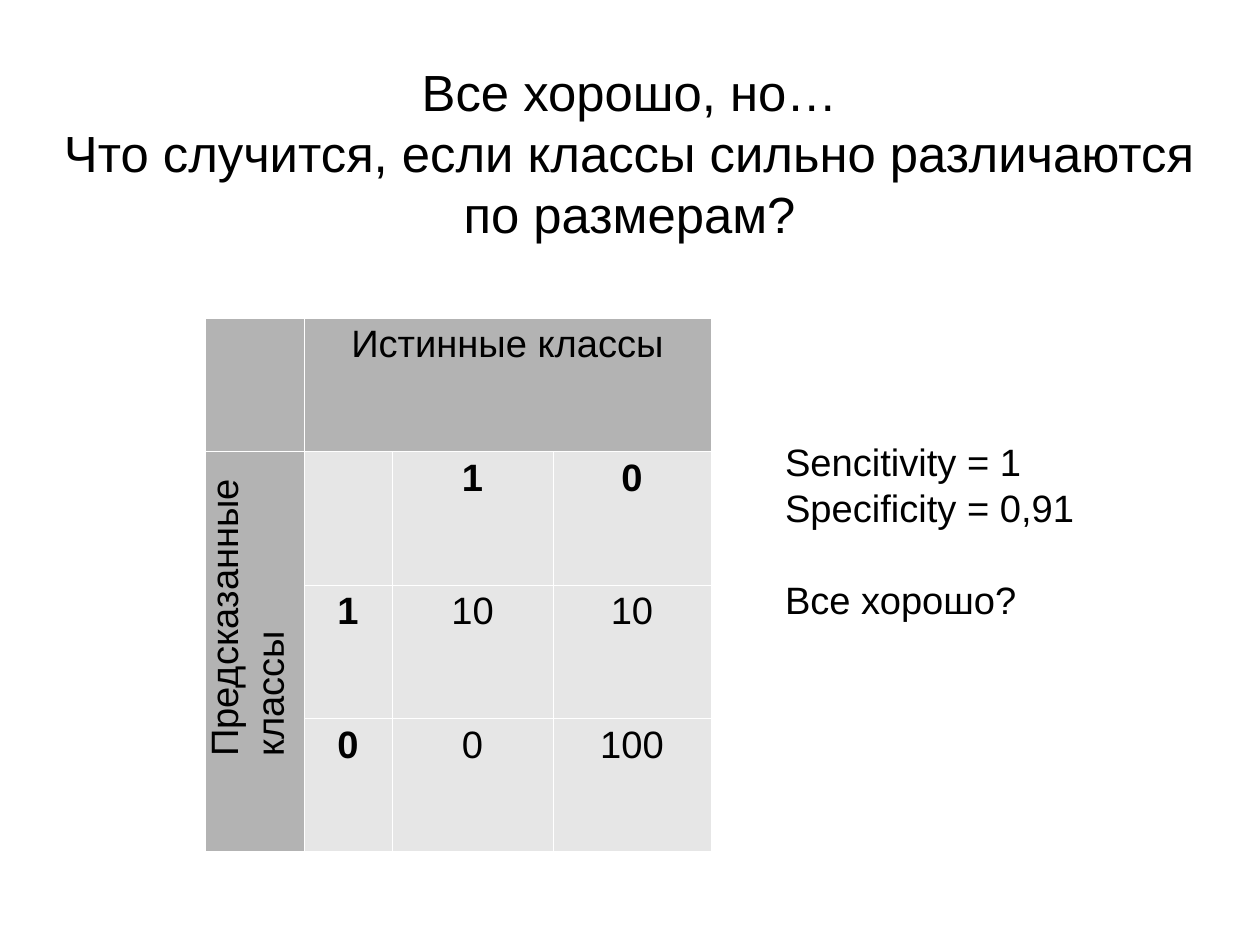
from dataclasses import dataclass

from lxml.etree import SubElement
from pptx import Presentation
from pptx.dml.color import RGBColor as RGB
from pptx.enum.text import MSO_ANCHOR as Anchor, MSO_AUTO_SIZE as AutoSize, PP_ALIGN as Align
from pptx.oxml.ns import qn
from pptx.util import Inches, Pt

TITLE_LINES = ["Все хорошо, но…", "Что случится, если классы сильно различаются по размерам?"]
TRUE_LABEL = "Истинные классы"
PREDICTED_LABEL = "Предсказанные классы"
CONFUSION = [["", "1", "0"], ["1", "10", "10"], ["0", "0", "100"]]
METRICS = ["Sencitivity = 1", "Specificity = 0,91"]
QUESTION = "Все хорошо?"

CM_PER_INCH = 2.54
SLIDE_CM = (28, 21)
COLUMN_WIDTHS = [0.87, 0.77, 1.41, 1.38]
TABLE_HEIGHT = 4.67


@dataclass(frozen=True)
class Theme:
    font: str = "Arial"
    title_size: float = 32
    body_size: float = 24
    question_gap: float = 28.8
    border_width: float = 0.06
    ink: RGB = RGB(0, 0, 0)
    header: RGB = RGB(0xB3, 0xB3, 0xB3)
    body: RGB = RGB(0xE6, 0xE6, 0xE6)
    border: str = "FFFFFF"


THEME = Theme()


def add_run(paragraph, text, size=THEME.body_size, bold=False):
    run = paragraph.add_run()
    run.text = text
    run.font.name = THEME.font
    run.font.size = Pt(size)
    run.font.bold = bold
    run.font.color.rgb = THEME.ink


def fill_title(title):
    title.left, title.top, title.width, title.height = map(Inches, (0.55, 0.34, 9.92, 1.99))
    frame = title.text_frame
    frame.margin_left = frame.margin_top = frame.margin_right = frame.margin_bottom = 0
    frame.vertical_anchor = Anchor.MIDDLE
    frame.word_wrap = True
    frame.auto_size = AutoSize.NONE
    heading = frame.paragraphs[0]
    heading.alignment = Align.CENTER
    for index, line in enumerate(TITLE_LINES):
        if index:
            heading.add_line_break()
        add_run(heading, line, THEME.title_size)


def style_cell(cell, color):
    """Draw the four borders, then the fill, in the order the schema asks for."""
    properties = cell._tc.get_or_add_tcPr()
    for side in ("a:lnL", "a:lnR", "a:lnT", "a:lnB"):
        border = SubElement(properties, qn(side), w=str(int(Pt(THEME.border_width))))
        SubElement(SubElement(border, qn("a:solidFill")), qn("a:srgbClr"), val=THEME.border)
    cell.fill.solid()
    cell.fill.fore_color.rgb = color


def write_cell(cell, text, bold=False):
    paragraph = cell.text_frame.paragraphs[0]
    paragraph.alignment = Align.CENTER
    add_run(paragraph, text, bold=bold)


def add_confusion_table(slide):
    row_count, column_count = len(CONFUSION) + 1, len(COLUMN_WIDTHS)
    table = slide.shapes.add_table(
        row_count, column_count, Inches(1.79), Inches(2.78),
        Inches(sum(COLUMN_WIDTHS)), Inches(TABLE_HEIGHT)).table
    table.first_row = table.horz_banding = False
    for column, width in zip(table.columns, COLUMN_WIDTHS):
        column.width = Inches(width)

    for r in range(row_count):
        for c in range(column_count):
            is_header = r == 0 or c == 0
            style_cell(table.cell(r, c), THEME.header if is_header else THEME.body)
    table.cell(0, 1).merge(table.cell(0, column_count - 1))
    table.cell(1, 0).merge(table.cell(row_count - 1, 0))

    write_cell(table.cell(0, 1), TRUE_LABEL)
    for r, counts in enumerate(CONFUSION):
        for c, count in enumerate(counts):
            if count:
                write_cell(table.cell(r + 1, c + 1), count, bold=r == 0 or c == 0)


def add_text(slide, box, lines):
    label = slide.shapes.add_textbox(*map(Inches, box))
    frame = label.text_frame
    frame.word_wrap = True
    for index, line in enumerate(lines):
        paragraph = frame.add_paragraph() if index else frame.paragraphs[0]
        add_run(paragraph, line)
    return label


def main():
    deck = Presentation()
    deck.slide_width, deck.slide_height = (Inches(side / CM_PER_INCH) for side in SLIDE_CM)
    slide = deck.slides.add_slide(deck.slide_layouts.get_by_name("Title Only"))
    fill_title(slide.shapes.title)
    add_confusion_table(slide)
    predicted = add_text(slide, (0.23, 4.41, 3.78, 0.84), [PREDICTED_LABEL])
    predicted.rotation = 270
    metrics = add_text(slide, (6.77, 3.79, 2.76, 2.61), [*METRICS, QUESTION])
    metrics.text_frame.paragraphs[-1].space_before = Pt(THEME.question_gap)
    deck.save("out.pptx")


if __name__ == "__main__":
    main()
